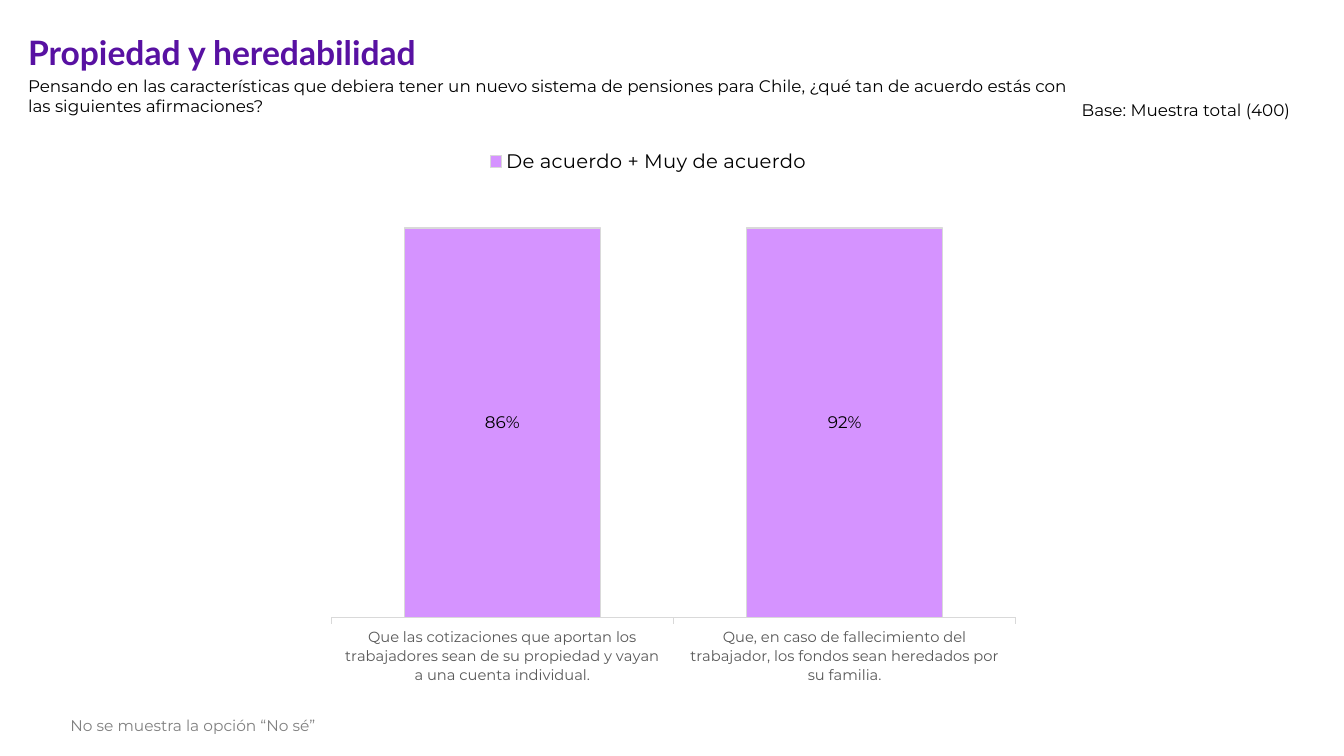
"""Build the slide on ownership and inheritance of pension savings."""
from pptx import Presentation
from pptx.chart.data import CategoryChartData
from pptx.dml.color import RGBColor
from pptx.enum.chart import XL_CHART_TYPE as ChartType
from pptx.enum.chart import XL_LABEL_POSITION as LabelPosition
from pptx.enum.chart import XL_LEGEND_POSITION as LegendPosition
from pptx.enum.chart import XL_TICK_MARK as TickMark
from pptx.enum.text import MSO_ANCHOR as Anchor
from pptx.oxml import parse_xml
from pptx.oxml.ns import nsdecls, qn
from pptx.util import Inches, Pt

COLORS = {"title": "5811A2", "text": "000000", "axis": "595959",
          "note": "808080", "bar": "D593FF", "line": "D9D9D9"}
BODY_FONT = "Montserrat"

deck = Presentation()
deck.slide_width, deck.slide_height = Inches(13.33), Inches(7.5)
page = deck.slides.add_slide(deck.slide_layouts[6])


def style_font(font, size, color="text", name=BODY_FONT, bold=False):
    font.size, font.name, font.bold = Pt(size), name, bold
    font.color.rgb = RGBColor.from_string(COLORS[color])


def add_text(text, left, top, width, height, anchor=Anchor.TOP, **style):
    box = page.shapes.add_textbox(*map(Inches, (left, top, width, height)))
    box.text_frame.word_wrap = True
    box.text_frame.vertical_anchor = anchor
    span = box.text_frame.paragraphs[0].add_run()
    span.text = text
    style_font(span.font, **style)


data = CategoryChartData(number_format="0%")
data.categories = [
    "Que las cotizaciones que aportan los trabajadores sean de su propiedad y vayan a una cuenta individual.",
    "Que, en caso de fallecimiento del trabajador, los fondos sean heredados por su familia.",
]
data.add_series("De acuerdo + Muy de acuerdo", (0.86, 0.92))
chart = page.shapes.add_chart(
    ChartType.COLUMN_STACKED_100,
    *map(Inches, (1.31, 1.37, 10.24, 5.87)), data).chart
style_font(chart.font, 12)
chart.has_title = False
chart.has_legend = True
chart.legend.position = LegendPosition.TOP
chart.legend.include_in_layout = False
style_font(chart.legend.font, 14)

category_axis, value_axis = chart.category_axis, chart.value_axis
category_axis.major_tick_mark = TickMark.OUTSIDE
category_axis.minor_tick_mark = TickMark.NONE
style_font(category_axis.tick_labels.font, 10.5, "axis")
value_axis.minimum_scale = 0
value_axis.has_major_gridlines = False
value_axis.tick_labels.number_format = "0%"
value_axis.tick_labels.number_format_is_linked = False
value_axis.visible = False

plot = chart.plots[0]
plot.gap_width, plot.overlap = 75, 100
plot.vary_by_categories = False
series = plot.series[0]
series.format.fill.solid()
series.format.fill.fore_color.rgb = RGBColor.from_string(COLORS["bar"])
for outline in (series.format.line, category_axis.format.line):
    outline.color.rgb = RGBColor.from_string(COLORS["line"])
    outline.width = Pt(0.75)

labels = series.data_labels
labels.show_value = True
labels.position = LabelPosition.CENTER
labels.number_format, labels.number_format_is_linked = "0%", False
style_font(labels.font, 12)

plot_area = chart.element.find(qn("c:chart")).find(qn("c:plotArea"))
for layout in plot_area.findall(qn("c:layout")):
    plot_area.remove(layout)
shares = {"x": 0.193, "y": 0.152, "w": 0.663, "h": 0.659}
modes = "".join(f'<c:{side}Mode val="edge"/>' for side in "xy")
sizes = "".join(f'<c:{side} val="{share}"/>' for side, share in shares.items())
plot_area.insert(0, parse_xml(
    f'<c:layout {nsdecls("c")}><c:manualLayout><c:layoutTarget val="inner"/>'
    f'{modes}{sizes}</c:manualLayout></c:layout>'))

add_text("Propiedad y heredabilidad", 0.18, 0.18, 9, 0.67, anchor=Anchor.MIDDLE,
         size=24, color="title", name="Lato", bold=True)
add_text("Pensando en las características que debiera tener un nuevo sistema de "
         "pensiones para Chile, ¿qué tan de acuerdo estás con las siguientes "
         "afirmaciones?", 0.18, 0.7, 10.74, 0.5, size=12)
add_text("Base: Muestra total (400)", 10.63, 0.94, 2.45, 0.3, size=12)
add_text("No se muestra la opción “No sé”", 0.6, 7.06, 7.95, 0.29,
         size=11, color="note")

deck.save("out.pptx")
